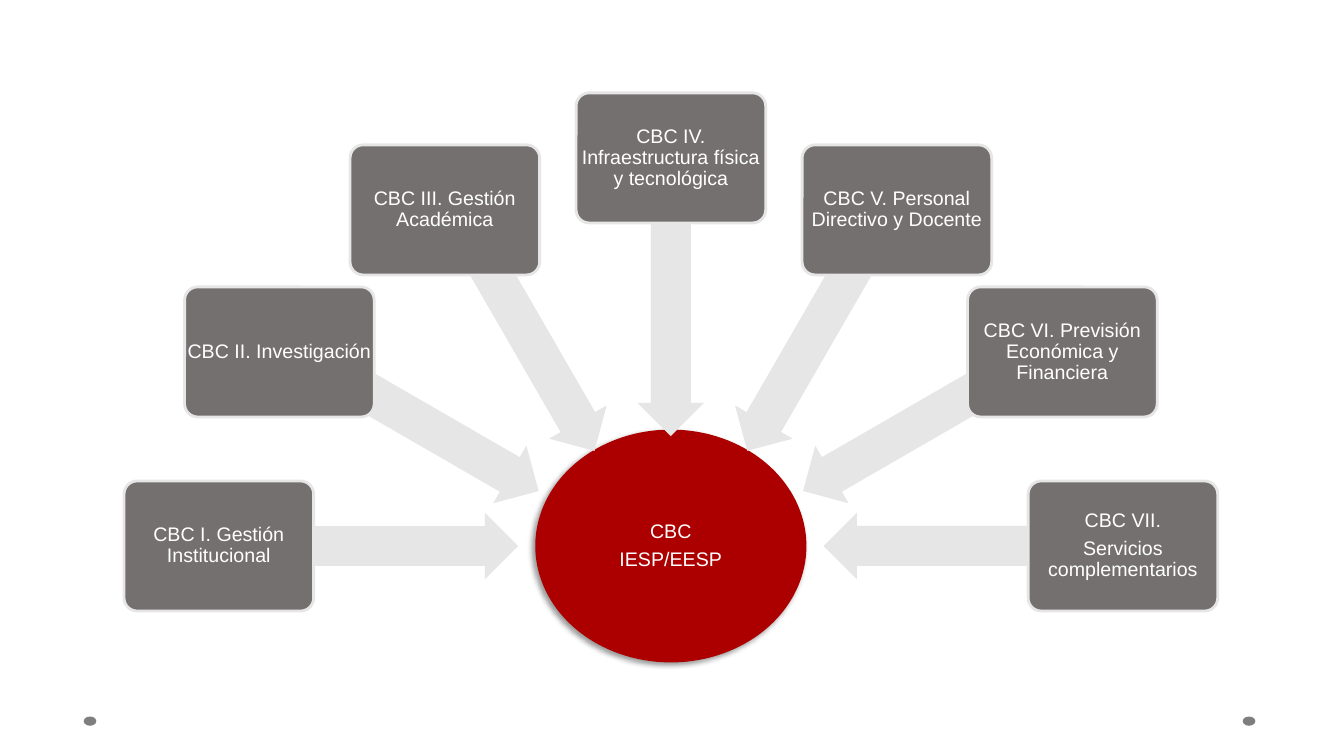
from dataclasses import dataclass
from math import cos, radians, sin

from lxml import etree
from pptx import Presentation
from pptx.dml.color import RGBColor
from pptx.enum.shapes import MSO_SHAPE
from pptx.enum.text import MSO_ANCHOR, PP_ALIGN
from pptx.oxml.ns import qn
from pptx.shapes.autoshape import Shape
from pptx.slide import Slide
from pptx.util import Pt

OVAL = MSO_SHAPE.OVAL
ROUNDED = MSO_SHAPE.ROUNDED_RECTANGLE
LEFT_ARROW = MSO_SHAPE.LEFT_ARROW
MIDDLE = MSO_ANCHOR.MIDDLE
CENTER = PP_ALIGN.CENTER


@dataclass(frozen=True)
class Theme:
    font: str = "Arial"
    size: float = 14
    line_spacing: float = 0.9
    space_before: float = 4.9
    text: str = "FFFFFF"
    core: str = "AC0000"
    box: str = "757070"
    pale: str = "E7E6E6"
    dot: str = "7E7E7E"
    shadow: str = "000000"


@dataclass(frozen=True)
class Ring:
    radius_x: float
    radius_y: float
    width: float
    height: float

    def center(self, angle: float) -> tuple[float, float]:
        turn = radians(angle)
        return (CORE_X + self.radius_x * cos(turn),
                CORE_Y + self.radius_y * sin(turn))


@dataclass(frozen=True)
class Condition:
    lines: tuple[str, ...]
    wrap: bool = True


THEME = Theme()
CORE_X, CORE_Y = 479.2, 390
CORE_WIDTH, CORE_HEIGHT = 193.7, 166.3
BOX_RING = Ring(322.9, 277.2, 135.4, 92.9)
ARROW_RING = Ring(216, 185.4, 213.8, 47.5)
START_ANGLE, ANGLE_STEP = 180, 30
DOT_CENTERS, DOT_Y = (64.3, 892.2), 515.1
CORE_LINES = ("CBC", "IESP/EESP")
CONDITIONS = (
    Condition(("CBC I. Gestión Institucional",)),
    Condition(("CBC II. Investigación",), wrap=False),
    Condition(("CBC III. Gestión Académica",)),
    Condition(("CBC IV. Infraestructura física y tecnológica",)),
    Condition(("CBC V. Personal Directivo y Docente",)),
    Condition(("CBC VI. Previsión Económica y Financiera",)),
    Condition(("CBC VII.", "Servicios complementarios")),
)


def add_centered(slide: Slide, kind: int, center: tuple[float, float],
                 width: float, height: float, color: str) -> Shape:
    shape = slide.shapes.add_shape(
        kind, Pt(center[0] - width / 2), Pt(center[1] - height / 2), Pt(width), Pt(height))
    shape.shadow.inherit = False
    shape.fill.solid()
    shape.fill.fore_color.rgb = RGBColor.from_string(color)
    shape.line.fill.background()
    return shape


def write_text(shape: Shape, lines: tuple[str, ...], *, wrap: bool = True,
               size: float = THEME.size, color: str = THEME.text) -> None:
    frame = shape.text_frame
    frame.word_wrap = wrap
    frame.vertical_anchor = MIDDLE
    frame.margin_left = frame.margin_right = frame.margin_top = frame.margin_bottom = Pt(0)
    for index, line in enumerate(lines):
        paragraph = frame.add_paragraph() if index else frame.paragraphs[0]
        paragraph.text = line
        paragraph.alignment = CENTER
        paragraph.line_spacing = THEME.line_spacing
        if index:
            paragraph.space_before = Pt(THEME.space_before)
        paragraph.font.name = THEME.font
        paragraph.font.size = Pt(size)
        paragraph.font.color.rgb = RGBColor.from_string(color)


def add_shadow(shape: Shape) -> None:
    effects = shape.element.spPr.find(qn("a:effectLst"))
    shadow = etree.SubElement(effects, qn("a:outerShdw"), blurRad=str(Pt(4)), dist=str(Pt(3)),
                              dir=str(135 * 60000), algn="tr", rotWithShape="0")
    color = etree.SubElement(shadow, qn("a:srgbClr"), val=THEME.shadow)
    etree.SubElement(color, qn("a:alpha"), val="40000")


def add_core(slide: Slide) -> None:
    core = add_centered(slide, OVAL, (CORE_X, CORE_Y), CORE_WIDTH, CORE_HEIGHT, THEME.core)
    add_shadow(core)
    write_text(core, CORE_LINES)


def add_condition(slide: Slide, condition: Condition, angle: float) -> None:
    arrow = add_centered(slide, LEFT_ARROW, ARROW_RING.center(angle),
                         ARROW_RING.width, ARROW_RING.height, THEME.pale)
    arrow.adjustments[0] = 0.6
    arrow.adjustments[1] = 0.5
    arrow.rotation = angle % 360
    box = add_centered(slide, ROUNDED, BOX_RING.center(angle),
                       BOX_RING.width, BOX_RING.height, THEME.box)
    box.adjustments[0] = 0.1
    box.line.color.rgb = RGBColor.from_string(THEME.pale)
    box.line.width = Pt(2)
    write_text(box, condition.lines, wrap=condition.wrap)


def main() -> None:
    presentation = Presentation()
    presentation.slide_width = Pt(960)
    presentation.slide_height = Pt(540)
    slide = presentation.slides.add_slide(presentation.slide_layouts[6])
    for dot_x in DOT_CENTERS:
        add_centered(slide, OVAL, (dot_x, DOT_Y), 9, 6.6, THEME.dot)
    add_core(slide)
    for index, condition in enumerate(CONDITIONS):
        add_condition(slide, condition, START_ANGLE + index * ANGLE_STEP)
    presentation.save("out.pptx")


if __name__ == "__main__":
    main()
